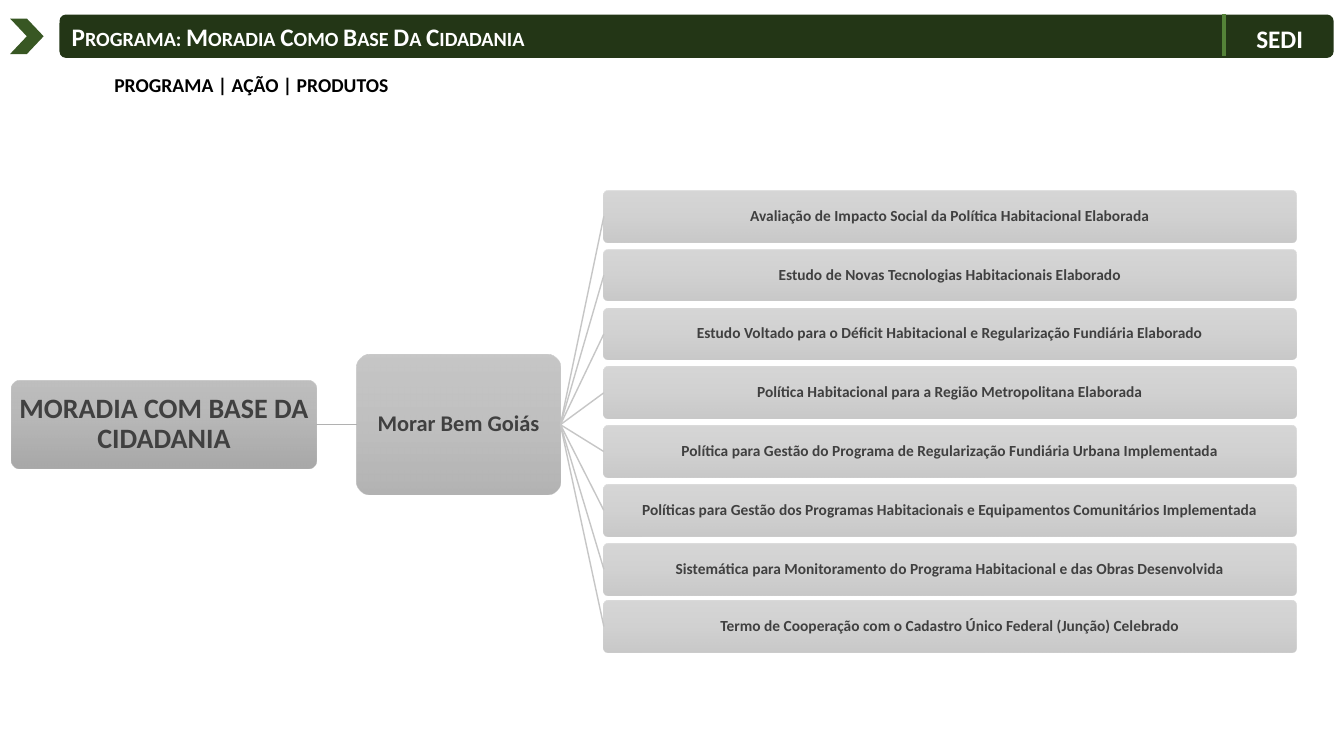
"""Build the slide that links a housing programme to its action and products."""
from lxml import etree
from pptx import Presentation, util as u
from pptx.dml.color import RGBColor
from pptx.enum import shapes, text
from pptx.oxml.ns import qn

COLORS = {
    "banner": "233616", "chevron": "385723", "divider": "548238",
    "white": "FFFFFF", "black": "000000", "label": "404040",
    "trunk": "B1B1B1", "branch": "C6C6C6",
}
GRADIENT = {0: "AFAFAF", 50: "A5A5A5", 100: "939393"}
PRODUCTS = [
    "Avaliação de Impacto Social da Política Habitacional Elaborada",
    "Estudo de Novas Tecnologias Habitacionais Elaborado",
    "Estudo Voltado para o Déficit Habitacional e Regularização Fundiária Elaborado",
    "Política Habitacional para a Região Metropolitana Elaborada",
    "Política para Gestão do Programa de Regularização Fundiária Urbana Implementada",
    "Políticas para Gestão dos Programas Habitacionais e Equipamentos Comunitários Implementada",
    "Sistemática para Monitoramento do Programa Habitacional e das Obras Desenvolvida",
    "Termo de Cooperação com o Cadastro Único Federal (Junção) Celebrado",
]

presentation = Presentation()
presentation.slide_width = u.Inches(13.33)
presentation.slide_height = u.Inches(7.5)
slide = presentation.slides.add_slide(presentation.slide_layouts[5])


def place(left, top, width, height):
    """Turn percentages of the slide into lengths."""
    column, row = presentation.slide_width / 100, presentation.slide_height / 100
    return [u.Emu(round(share * unit)) for share, unit in
            ((left, column), (top, row), (width, column), (height, row))]


def write(frame, words, size, color, align=text.PP_ALIGN.LEFT):
    """Add one bold run to the first paragraph and return it."""
    paragraph = frame.paragraphs[0]
    paragraph.alignment = align
    run = paragraph.add_run()
    run.text = words
    run.font.name = "Calibri"
    run.font.size = u.Pt(size)
    run.font.bold = True
    run.font.color.rgb = RGBColor.from_string(COLORS[color])
    return run


header_parts = [
    (shapes.MSO_SHAPE.CHEVRON, (0.75, 2.45, 2.5, 4.7), 0.5, "chevron"),
    (shapes.MSO_SHAPE.ROUNDED_RECTANGLE, (4.43, 1.93, 94.8, 5.73), 0.15, "banner"),
    (shapes.MSO_SHAPE.ROUNDED_RECTANGLE, (4.2, 8.67, 86.85, 4.93), 0.5, None),
    (shapes.MSO_SHAPE.CHEVRON, (5.48, 9.47, 1.35, 2.93), 0.5, "white"),
]
header_shapes = []
for preset, box, adjustment, color in header_parts:
    part = slide.shapes.add_shape(preset, *place(*box))
    part.adjustments[0] = adjustment
    part.shadow.inherit = False
    part.line.fill.background()
    if color:
        part.fill.solid()
        part.fill.fore_color.rgb = RGBColor.from_string(COLORS[color])
    else:
        part.fill.background()
    header_shapes.append(part)
chevron, banner, subtitle, marker = header_shapes

title = slide.shapes.title
title.left, title.top, title.width, title.height = place(4.43, 1.93, 86.6, 5.73)
title.text_frame.auto_size = text.MSO_AUTO_SIZE.NONE
title.text_frame.vertical_anchor = text.MSO_ANCHOR.MIDDLE
title.text_frame.margin_left = u.Inches(0.12)
title_run = write(title.text_frame, "Programa: Moradia Como Base Da Cidadania", 18, "white")
title_run._r.get_or_add_rPr().set("cap", "small")
banner._element.addnext(title._element)

agency = slide.shapes.add_textbox(*place(92.7, 2.4, 5.03, 5.33))
agency.text_frame.word_wrap = False
write(agency.text_frame, "SEDI", 18, "white", text.PP_ALIGN.CENTER)

subtitle.text_frame.word_wrap = True
subtitle.text_frame.vertical_anchor = text.MSO_ANCHOR.MIDDLE
subtitle.text_frame.margin_left = u.Inches(0.52)
subtitle.text_frame.margin_top = subtitle.text_frame.margin_bottom = u.Inches(0.04)
write(subtitle.text_frame, "PROGRAMA | AÇÃO | PRODUTOS", 14, "black")

node_rows = [
    ("MORADIA COM BASE DA CIDADANIA", (0.85, 50.35, 22.7, 11.65), 20, 80),
    ("Morar Bem Goiás", (26.55, 46.95, 15.15, 18.45), 16, 70),
]
for index, product in enumerate(PRODUCTS):
    top = min(25.2 + 7.78 * index, 79.45)
    node_rows.append((product, (44.93, top, 51.5, 6.83), 11, 50))

nodes = []
for words, box, size, opacity in node_rows:
    node = slide.shapes.add_shape(shapes.MSO_SHAPE.ROUNDED_RECTANGLE, *place(*box))
    node.adjustments[0] = 0.1
    node.shadow.inherit = False
    node.line.fill.background()
    node.fill.gradient()
    node.fill.gradient_angle = 270
    stops = node._element.spPr.find(qn("a:gradFill")).find(qn("a:gsLst"))
    for stop in list(stops):
        stops.remove(stop)
    for position, color in GRADIENT.items():
        stop = etree.SubElement(stops, qn("a:gs"), pos=str(position * 1000))
        shade = etree.SubElement(stop, qn("a:srgbClr"), val=color)
        etree.SubElement(shade, qn("a:alpha"), val=str(opacity * 1000))
    frame = node.text_frame
    frame.word_wrap = True
    frame.vertical_anchor = text.MSO_ANCHOR.MIDDLE
    frame.margin_left = frame.margin_right = u.Inches(0.01)
    frame.margin_top = frame.margin_bottom = u.Inches(0.01)
    frame.paragraphs[0].line_spacing = 0.9
    write(frame, words, size, "label", text.PP_ALIGN.CENTER)
    nodes.append(node)

program, action, *product_nodes = nodes
divider_left, divider_top, _, divider_height = place(91.05, 1.87, 0, 5.6)
divider = slide.shapes.add_connector(
    shapes.MSO_CONNECTOR.STRAIGHT, divider_left, divider_top,
    divider_left, divider_top + divider_height)
lines = [(divider, "divider", 3)]
links = [(program, action, "trunk")]
links += [(action, product_node, "branch") for product_node in product_nodes]
for source, target, color in links:
    link = slide.shapes.add_connector(shapes.MSO_CONNECTOR.STRAIGHT, 0, 0, 0, 0)
    link.begin_connect(source, 3)
    link.end_connect(target, 1)
    lines.append((link, color, 1))
for connector, color, weight in lines:
    connector.line.color.rgb = RGBColor.from_string(COLORS[color])
    connector.line.width = u.Pt(weight)
    etree.SubElement(connector._element.spPr, qn("a:effectLst"))

presentation.save("out.pptx")
